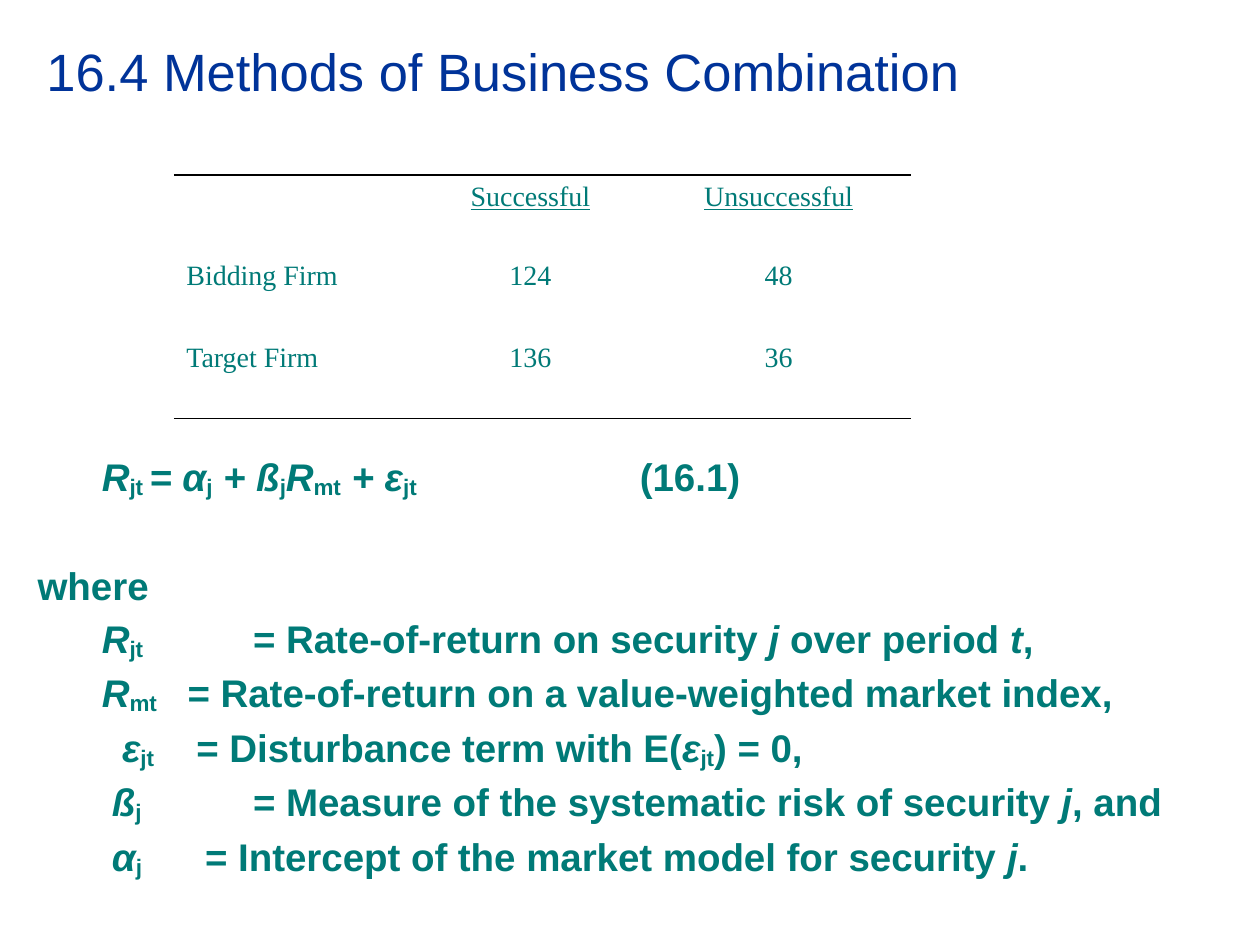
"""Build the slide on methods of business combination."""
from lxml.etree import SubElement
from pptx import Presentation
from pptx.dml.color import RGBColor
from pptx.enum.text import MSO_ANCHOR, PP_ALIGN
from pptx.oxml.ns import qn
from pptx.util import Inches, Pt

BLUE = RGBColor(0x00, 0x33, 0x99)
TEAL = RGBColor(0x00, 0x7A, 0x77)
BLACK = RGBColor(0x00, 0x00, 0x00)

TITLE = {"name": "Arial", "size": Pt(30)}
BODY = {"name": "Arial", "size": Pt(22), "bold": True}
CELL = {"name": "Times New Roman", "size": Pt(16)}
PLAIN = "{2D5ABB26-0587-4C30-8999-92F81FD0307C}"

deck = Presentation()
deck.slide_width, deck.slide_height = Inches(10), Inches(7.5)
wide, high = deck.slide_width / 100, deck.slide_height / 100
slide = deck.slides.add_slide(deck.slide_layouts[6])


def add_box(left, top, width, height):
    box = slide.shapes.add_textbox(
        int(left * wide), int(top * high), int(width * wide), int(height * high))
    box.text_frame.word_wrap = True
    return box.text_frame


def add_run(para, text, form, color):
    run = para.add_run()
    run.text = text
    for key, value in form.items():
        setattr(run.font, key, value)
    run.font.color.rgb = color
    return run


title = add_box(2.7, 2.7, 93.4, 9.47)
title.vertical_anchor = MSO_ANCHOR.MIDDLE
add_run(title.paragraphs[0], "16.4 Methods of Business Combination", TITLE, BLUE)

rows = [
    ["", "Successful", "Unsuccessful"],
    ["Bidding Firm", "124", "48"],
    ["Target Firm", "136", "36"],
]
table = slide.shapes.add_table(
    3, 3, int(13.8 * wide), int(18.53 * high), int(58.5 * wide), int(25.73 * high)).table
table.first_row = table.horz_banding = False
table._tbl.tblPr.find(qn("a:tableStyleId")).text = PLAIN
for column, share in zip(table.columns, (19.1, 18.4, 21)):
    column.width = int(share * wide)
for row, share in zip(table.rows, (8.4, 8.67, 8.67)):
    row.height = int(share * high)

for r, row in enumerate(rows):
    for c, text in enumerate(row):
        cell = table.cell(r, c)
        props = cell._tc.get_or_add_tcPr()
        for side, edge in (("a:lnT", 0), ("a:lnB", 2)):
            if r == edge:
                line = SubElement(props, qn(side), w=str(Pt(1)))
                fill = SubElement(line, qn("a:solidFill"))
                SubElement(fill, qn("a:srgbClr"), val=str(BLACK))
        cell.fill.background()
        para = cell.text_frame.paragraphs[0]
        para.alignment = PP_ALIGN.CENTER if c else PP_ALIGN.LEFT
        if text:
            add_run(para, text, {**CELL, "underline": r == 0}, TEAL)

# each entry: space before, tab stops, runs (* italic, _ lowered)
lines = [
    (0, (5.1, 47.8), "\t|*R|_jt |*= α|_j|* + ß|_j|*R|_mt|* + ε|_jt|\t(16.1)"),
    (35.5, (), "where"),
    (4, (5.1, 17.1), "\t|*R|_jt|\t= Rate-of-return on security |*j |over period |*t|,"),
    (4.4, (5.1, 11.9), "\t|*R|_mt|\t= Rate-of-return on a value-weighted market index,"),
    (4.4, (6.7, 12.6), "\t|*ε|_jt|\t= Disturbance term with E(|*ε|_jt|) = 0,"),
    (4.4, (5.9, 17.1), "\t|*ß|_j|\t= Measure of the systematic risk of security |*j|, and"),
    (4.4, (5.9, 13.3), "\t|*α|_j|\t= Intercept of the market model for security |*j|."),
]
body = add_box(2, 41.6, 96.1, 54.67)
body.margin_top = int(6.33 * high)
for n, (space, stops, text) in enumerate(lines):
    para = body.add_paragraph() if n else body.paragraphs[0]
    if stops:
        tabs = SubElement(para._p.get_or_add_pPr(), qn("a:tabLst"))
        for stop in stops:
            SubElement(tabs, qn("a:tab"), pos=str(int(stop * wide)), algn="l")
    para.space_before = Pt(space)
    for part in text.split("|"):
        form = {**BODY, "italic": part.startswith("*")}
        run = add_run(para, part.lstrip("*_"), form, TEAL)
        if part.startswith("_"):
            run._r.get_or_add_rPr().set("baseline", "-10000")

deck.save("out.pptx")
